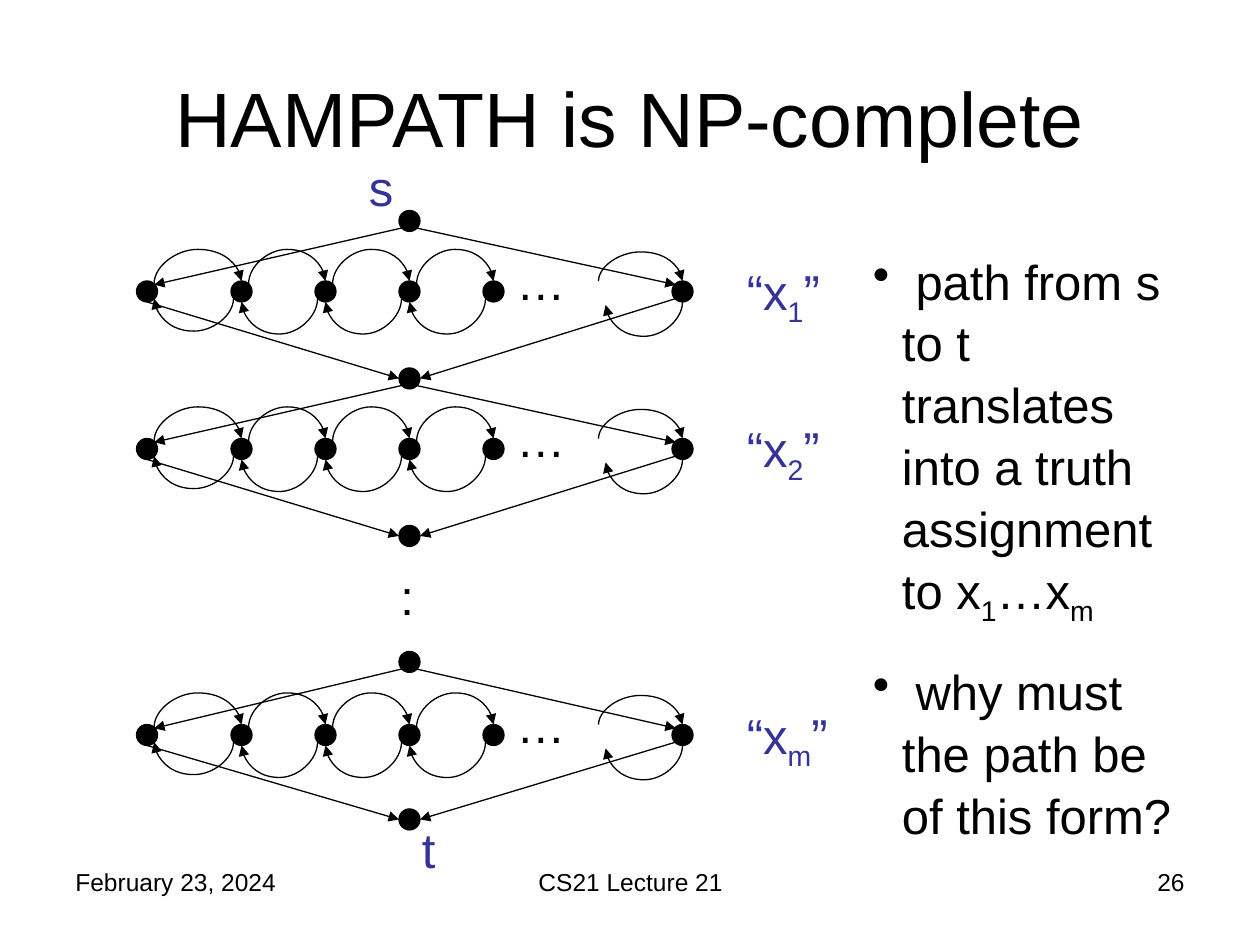
"""Build a slide on the HAMPATH reduction: variable gadgets chained from s to t."""
from lxml.etree import SubElement
from pptx import Presentation
from pptx.dml.color import RGBColor as RGB
from pptx.enum.shapes import MSO_CONNECTOR as LINK, MSO_SHAPE as SHAPE
from pptx.enum.text import MSO_ANCHOR as ANCHOR, PP_ALIGN as ALIGN
from pptx.oxml.ns import qn
from pptx.util import Inches, Pt

INK = {"black": "000000", "blue": "333399"}
FOOT = dict(size=14, space=1)
CELL = 1 / 12
DOT = 2 * CELL
EDGE, NEAR, FAR, HAIR = 0.02, 0.03, 0.14, 0.0017
HUB, LEFT, RIGHT = 38, 13, 64
CHAIN = [13, 22, 30, 38, 46]
ROWS = [
    (1.67, 2.23, 2.92, "1", 0.92),
    (2.92, 3.48, 4.17, "2", 0.83),
    (5.17, 5.75, 6.42, "m", 1),
]
TEXTS = [
    ((0.5, 6.83, 2.33, 0.52), [["February 23, 2024"]], FOOT),
    ((3.42, 6.83, 3.17, 0.52), [["CS21 Lecture 21"]], dict(FOOT, align=ALIGN.CENTER)),
    ((7.17, 6.83, 2.33, 0.52), [["26"]], dict(FOOT, align=ALIGN.RIGHT)),
    ((0.5, 0.3, 9, 1.25), [["HAMPATH is NP-complete"]],
     dict(size=44, space=1, align=ALIGN.CENTER, anchor=ANCHOR.MIDDLE)),
    ((3.08, 4.42, 0.42, 0.57), [[":"]], {}),
    ((2.83, 1.18, 0.58, 0.57), [["s"]], dict(ink="blue")),
    ((3.25, 6.43, 0.58, 0.57), [["t"]], dict(ink="blue")),
    ((6.83, 1.92, 2.58, 4.07), [
        [" path from s to t translates into a truth assignment to x", "1", "…x", "m"],
        [" why must the path be of this form?"],
    ], dict(bullet="•")),
]

deck = Presentation()
deck.slide_width, deck.slide_height = Inches(10), Inches(7.5)
shapes = deck.slides.add_slide(deck.slide_layouts[6]).shapes


def write(box, paras, size=28, ink="black", align=ALIGN.LEFT,
          anchor=ANCHOR.TOP, space=1.05, bullet=None):
    """Add a text box; every second run of a paragraph is a subscript."""
    frame = shapes.add_textbox(*map(Inches, box)).text_frame
    frame.word_wrap, frame.vertical_anchor = True, anchor
    for i, runs in enumerate(paras):
        para = frame.paragraphs[0] if i == 0 else frame.add_paragraph()
        style = dict(alignment=align, line_spacing=space, space_before=Pt(18 if i else 0))
        for key, val in style.items():
            setattr(para, key, val)
        if bullet:
            props = para._p.get_or_add_pPr()
            props.set("marL", str(Inches(0.23)))
            props.set("indent", str(-Inches(0.23)))
            SubElement(props, qn("a:buChar")).set("char", bullet)
        for j, words in enumerate(runs):
            run = para.add_run()
            run.text = words
            for key, val in dict(name="Arial", size=Pt(size)).items():
                setattr(run.font, key, val)
            run.font.color.rgb = RGB.from_string(INK[ink])
            if j % 2:
                run.font._element.set("baseline", "-25000")


def node(col, top):
    """Add one graph node."""
    dot = shapes.add_shape(SHAPE.OVAL, *map(Inches, (col * CELL, top, DOT, DOT)))
    dot.shadow.inherit = False
    dot.fill.solid()
    dot.fill.fore_color.rgb = dot.line.color.rgb = RGB.from_string(INK["black"])
    dot.line.width = Pt(0.75)


def link(kind, *ends):
    """Add a thin connector with an arrowhead at its end."""
    wire = shapes.add_connector(kind, *map(Inches, ends))
    wire.line.color.rgb = RGB.from_string(INK["black"])
    wire.line.width = Pt(0.75)
    SubElement(wire.line._get_or_add_ln(), qn("a:tailEnd")).set("type", "triangle")
    SubElement(wire._element.spPr, qn("a:effectLst"))
    return wire


def arc(x1, y1, x2, y2, peak):
    """Add a looping arrow, over the row when rightward and under it when leftward."""
    wide, tall = max(abs(y2 - y1), HAIR), abs(x2 - x1)
    x, y = (x1 + x2 - wide) / 2, (y1 + y2 - tall) / 2
    props = link(LINK.CURVE, x, y, x + wide, y + tall)._element.spPr
    props.find(qn("a:xfrm")).set("rot", str((270 if x2 > x1 else 90) * 60000))
    geom = props.find(qn("a:prstGeom"))
    marks = geom.find(qn("a:avLst"))
    if marks is None:
        marks = SubElement(geom, qn("a:avLst"))
    guide = SubElement(marks, qn("a:gd"))
    guide.set("name", "adj1")
    guide.set("fmla", f"val {round(abs(peak - y1) / wide * 100000)}")


def gadget(top, row, base):
    """Add one variable's diamond of nodes and arrows."""
    for col in CHAIN + [RIGHT]:
        node(col, row)
    hub, west, east = HUB * CELL, LEFT * CELL, RIGHT * CELL
    link(LINK.STRAIGHT, hub + EDGE, top + FAR, west + FAR, row + NEAR)
    link(LINK.STRAIGHT, hub + FAR, top + FAR, east + NEAR, row + NEAR)
    link(LINK.STRAIGHT, west + DOT / 2, row + DOT, hub, base + DOT / 2)
    link(LINK.STRAIGHT, east + NEAR, row + FAR, hub + DOT, base + DOT / 2)
    for i, (a, b) in enumerate(zip(CHAIN, CHAIN[1:])):
        a, b = a * CELL, b * CELL
        arc(a + FAR, row + EDGE, b + DOT / 2, row, row - 0.25)
        if i == 0:
            arc(b + EDGE, row + FAR, a + FAR, row + FAR, row + 0.42)
        else:
            arc(b + EDGE, row + FAR, a + DOT / 2, row + DOT, row + 0.42)
    mid = east + DOT / 2
    arc(mid - 8 * CELL, row, mid, row, row - 0.25)
    arc(mid, row + DOT, mid - 0.61, row + 0.19, row + 0.44)


for top in sorted({hub for row in ROWS for hub in (row[0], row[2])}):
    node(HUB, top)
for top, row, base, sub, width in ROWS:
    gadget(top, row, base)
    write((4, row - 0.31, 0.75, 0.57), [["…"]])
    write((5.83, row - 0.23, width, 0.57), [["“x", sub, "”"]], ink="blue")
for box, paras, style in TEXTS:
    write(box, paras, **style)
deck.save("out.pptx")
